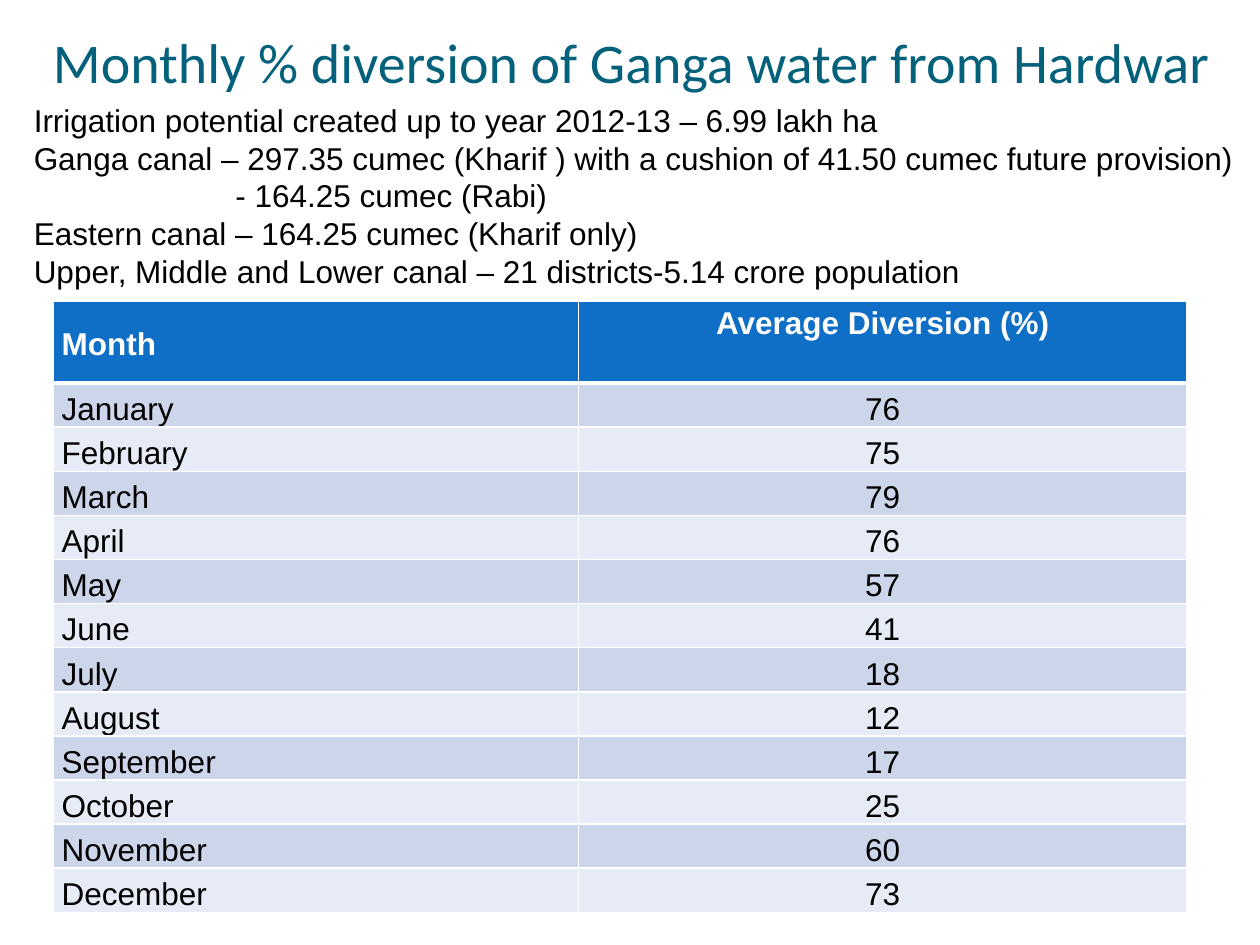
"""Build the slide on monthly diversion of Ganga water from Hardwar."""
import pptx
import pptx.dml.color
import pptx.enum.text
import pptx.oxml
import pptx.oxml.ns
import pptx.util

Inches = pptx.util.Inches
Pt = pptx.util.Pt
ANCHOR = pptx.enum.text.MSO_ANCHOR
ALIGN = pptx.enum.text.PP_ALIGN

COLORS = {
    "title": "04617B",
    "text": "000000",
    "header": "0F6FC6",
    "band_dark": "CCD5EA",
    "band_light": "E7EBF5",
    "white": "FFFFFF",
}

TITLE = "Monthly % diversion of Ganga water from Hardwar"
FACTS = [
    ("Irrigation potential created up to year 2012-13 – 6.99 lakh ha", 0),
    ("Ganga canal – 297.35 cumec (Kharif ) with a cushion of 41.50 cumec future provision)", 0),
    ("- 164.25 cumec (Rabi)", 1.6),
    ("Eastern canal – 164.25 cumec (Kharif only)", 0),
    ("Upper, Middle and Lower canal – 21 districts-5.14 crore population", 0),
]
HEADINGS = ("Month", "Average Diversion (%)")
DIVERSION = {
    "January": 76, "February": 75, "March": 79, "April": 76,
    "May": 57, "June": 41, "July": 18, "August": 12,
    "September": 17, "October": 25, "November": 60, "December": 73,
}


class SlideBuilder:
    def __init__(self, prs):
        self.slide = prs.slides.add_slide(prs.slide_layouts[5])
        self.font = "Arial"
        self.size = 18

    def style(self, p, color, size=None, name=None, bold=False):
        p.font.name = name or self.font
        p.font.size = Pt(size or self.size)
        p.font.bold = bold
        p.font.color.rgb = pptx.dml.color.RGBColor.from_string(COLORS[color])

    def title(self, text, left, top, width, height):
        sp = self.slide.shapes.title
        sp.left, sp.top = Inches(left), Inches(top)
        sp.width, sp.height = Inches(width), Inches(height)
        tf = sp.text_frame
        tf.text = text
        tf.margin_left = tf.margin_right = tf.margin_bottom = 0
        tf.margin_top = Inches(0.05)
        tf.vertical_anchor = ANCHOR.BOTTOM
        tf.auto_size = pptx.enum.text.MSO_AUTO_SIZE.NONE
        p = tf.paragraphs[0]
        p.alignment = ALIGN.LEFT
        self.style(p, "title", 32, "Calibri")

    def text(self, lines, left, top, width, height):
        sp = self.slide.shapes.add_textbox(
            Inches(left), Inches(top), Inches(width), Inches(height))
        tf = sp.text_frame
        tf.word_wrap = True
        tf.auto_size = pptx.enum.text.MSO_AUTO_SIZE.SHAPE_TO_FIT_TEXT
        tf.text = "\n".join(line for line, _ in lines)
        for p, (_, indent) in zip(tf.paragraphs, lines):
            self.style(p, "text")
            if indent:
                p._p.get_or_add_pPr().set("marL", str(Inches(indent)))

    def borders(self, cell, bottom):
        tc_pr = cell._tc.get_or_add_tcPr()
        for side, width in (("L", 1), ("R", 1), ("T", 1), ("B", bottom)):
            tc_pr.append(pptx.oxml.parse_xml(
                f'<a:ln{side} {pptx.oxml.ns.nsdecls("a")} w="{Pt(width)}">'
                f'<a:solidFill><a:srgbClr val="{COLORS["white"]}"/></a:solidFill>'
                f'</a:ln{side}>'))

    def cell(self, cell, text, fill, color, anchor, align, bold=False, bottom=1):
        self.borders(cell, bottom)
        cell.fill.solid()
        cell.fill.fore_color.rgb = pptx.dml.color.RGBColor.from_string(COLORS[fill])
        cell.margin_left = cell.margin_right = Inches(0.07)
        cell.margin_top = cell.margin_bottom = 0
        cell.vertical_anchor = anchor
        cell.text = text
        p = cell.text_frame.paragraphs[0]
        p.alignment = align
        p.line_spacing = 1.15
        self.style(p, color, bold=bold)

    def table(self, headings, values, left, top, widths, header_height, row_height):
        heights = [header_height] + [row_height] * len(values)
        table = self.slide.shapes.add_table(
            len(heights), len(widths), Inches(left), Inches(top),
            Inches(sum(widths)), Inches(sum(heights))).table
        for column, width in zip(table.columns, widths):
            column.width = Inches(width)
        for row, height in zip(table.rows, heights):
            row.height = Inches(height)
        aligns = (ALIGN.LEFT, ALIGN.CENTER)
        anchors = (ANCHOR.MIDDLE, ANCHOR.TOP)
        for c, heading in enumerate(headings):
            self.cell(table.cell(0, c), heading, "header", "white",
                      anchors[c], aligns[c], bold=True, bottom=3)
        table.cell(0, 0).text_frame.paragraphs[0].space_after = Pt(10)
        for r, record in enumerate(values.items(), 1):
            band = "band_dark" if r % 2 else "band_light"
            for c, value in enumerate(record):
                self.cell(table.cell(r, c), str(value), band, "text",
                          ANCHOR.BOTTOM, aligns[c])


def main():
    prs = pptx.Presentation()
    prs.slide_width, prs.slide_height = Inches(10), Inches(7.5)
    s = SlideBuilder(prs)
    s.title(TITLE, 0.42, 0.33, 9.33, 0.42)
    s.table(HEADINGS, DIVERSION, 0.42, 2.39, (4.17, 4.83), 0.65, 0.35)
    s.text(FACTS, 0.17, 0.75, 9.83, 1.62)
    prs.save("out.pptx")


if __name__ == "__main__":
    main()
